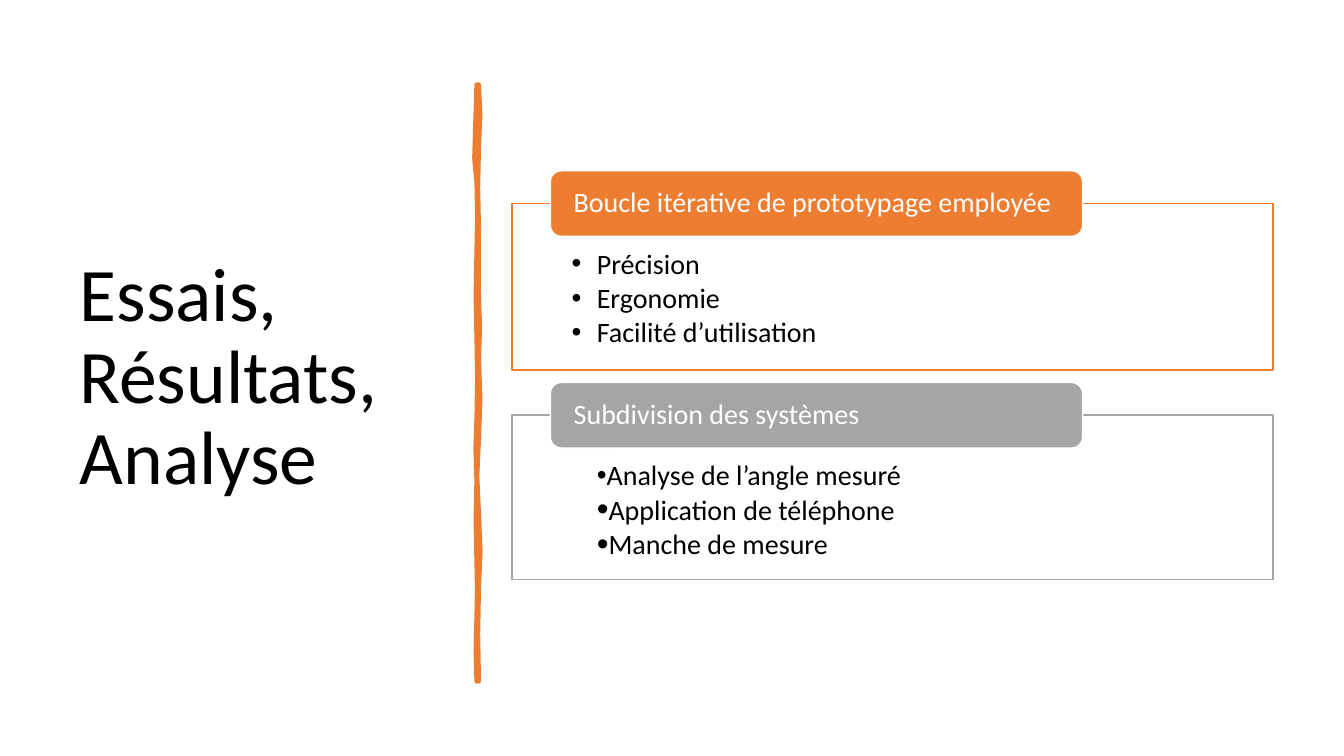
from pptx import Presentation
from pptx.dml.color import RGBColor
from pptx.enum import shapes, text
from pptx.oxml.ns import qn
from pptx.util import Pt
from lxml import etree

ORANGE = RGBColor(0xED, 0x7D, 0x31)
GRAY = RGBColor(0xA5, 0xA5, 0xA5)
WHITE = RGBColor(255, 255, 255)
BLACK = RGBColor(0, 0, 0)

TITLE = "Essais, Résultats, Analyse"
GROUPS = [
    ("Boucle itérative de prototypage employée", ORANGE, 118.8, -18,
     [("Précision", 100), ("Ergonomie", 100), ("Facilité d’utilisation", 100)]),
    ("Subdivision des systèmes", GRAY, 117.4, 0,
     [("Analyse de l’angle mesuré", 100), ("Application de téléphone", 120),
      ("Manche de mesure", 120)]),
]
RIGHT = [(342, 60.5), (343, 82), (342, 105), (341.4, 134), (342, 163),
         (341.8, 187), (342, 212), (342.8, 234), (342, 256), (343, 285),
         (342, 314), (340.8, 340), (342, 367), (343.1, 394), (342, 420),
         (341.4, 453), (342, 486.7)]
LEFT = [(340.5, 486.7), (339.9, 464), (340.5, 441), (340.9, 421),
        (340.5, 401), (339.9, 372), (340.5, 343), (339.8, 321),
        (340.5, 299), (341, 270), (340.5, 241), (339.9, 210),
        (340.5, 180), (341, 155), (340.5, 130), (338.9, 113), (340.5, 60.5)]

BOX_X, BOX_Y, BOX_W = 365.8, 145.4, 543.6
TAG_X, TAG_W, TAG_H = 393.1, 380.2, 46.8
STEP = 151.2


def style(shape, fill, line, width):
    shape.shadow.inherit = False
    shape.fill.solid()
    shape.fill.fore_color.rgb = fill
    shape.line.color.rgb = line
    shape.line.width = Pt(width)


def inset(frame, left, top, right, low):
    frame.word_wrap = True
    frame.margin_left, frame.margin_top = Pt(left), Pt(top)
    frame.margin_right, frame.margin_bottom = Pt(right), Pt(low)


def write(para, words, size, color, after=0):
    para.text = words
    para.alignment = text.PP_ALIGN.LEFT
    para.line_spacing = 0.9
    para.space_after = Pt(after)
    para.font.name = "Calibri"
    para.font.size = Pt(size)
    para.font.color.rgb = color


def bullet(para, hang, scale):
    props = para._p.get_or_add_pPr()
    props.set("marL", str(Pt(18)))
    props.set("indent", str(Pt(hang)))
    etree.SubElement(props, qn("a:buSzPct")).set("val", str(scale * 1000))
    etree.SubElement(props, qn("a:buFont")).set("typeface", "Arial")
    etree.SubElement(props, qn("a:buChar")).set("char", "•")
    props.append(props.find(qn("a:defRPr")))


def add(slide, kind, *place):
    return slide.shapes.add_shape(kind, *map(Pt, place))


def main():
    deck = Presentation()
    deck.slide_width, deck.slide_height = Pt(960), Pt(540)
    slide = deck.slides.add_slide(deck.slide_layouts[5])

    title = slide.shapes.title
    title.left, title.top = Pt(49.7), Pt(50.4)
    title.width, title.height = Pt(269.3), Pt(439.9)
    frame = title.text_frame
    inset(frame, 7.2, 3.6, 7.2, 3.6)
    frame.auto_size = text.MSO_AUTO_SIZE.NONE
    frame.vertical_anchor = text.MSO_ANCHOR.MIDDLE
    write(frame.paragraphs[0], TITLE, 54, BLACK)

    pen = slide.shapes.build_freeform(Pt(RIGHT[0][0]), Pt(RIGHT[0][1]))
    pen.add_line_segments([(Pt(x), Pt(y)) for x, y in RIGHT[1:] + LEFT])
    style(pen.convert_to_shape(), ORANGE, ORANGE, 3.25)

    for row, (head, color, high, hang, items) in enumerate(GROUPS):
        top = BOX_Y + row * STEP
        box = add(slide, shapes.MSO_SHAPE.RECTANGLE, BOX_X, top, BOX_W, high)
        style(box, WHITE, color, 1)
        frame = box.text_frame
        inset(frame, 42.5, 33.1, 42.5, 11.5)
        frame.vertical_anchor = text.MSO_ANCHOR.TOP
        for i, (words, scale) in enumerate(items):
            para = frame.add_paragraph() if i else frame.paragraphs[0]
            write(para, words, 20, BLACK, 3)
            bullet(para, hang, scale)

        tag = add(slide, shapes.MSO_SHAPE.ROUNDED_RECTANGLE,
                  TAG_X, top - TAG_H / 2, TAG_W, TAG_H)
        style(tag, color, WHITE, 1)
        frame = tag.text_frame
        inset(frame, 14.4, 0, 14.4, 0)
        frame.vertical_anchor = text.MSO_ANCHOR.MIDDLE
        write(frame.paragraphs[0], head, 20, WHITE)

    deck.save("out.pptx")


if __name__ == "__main__":
    main()
